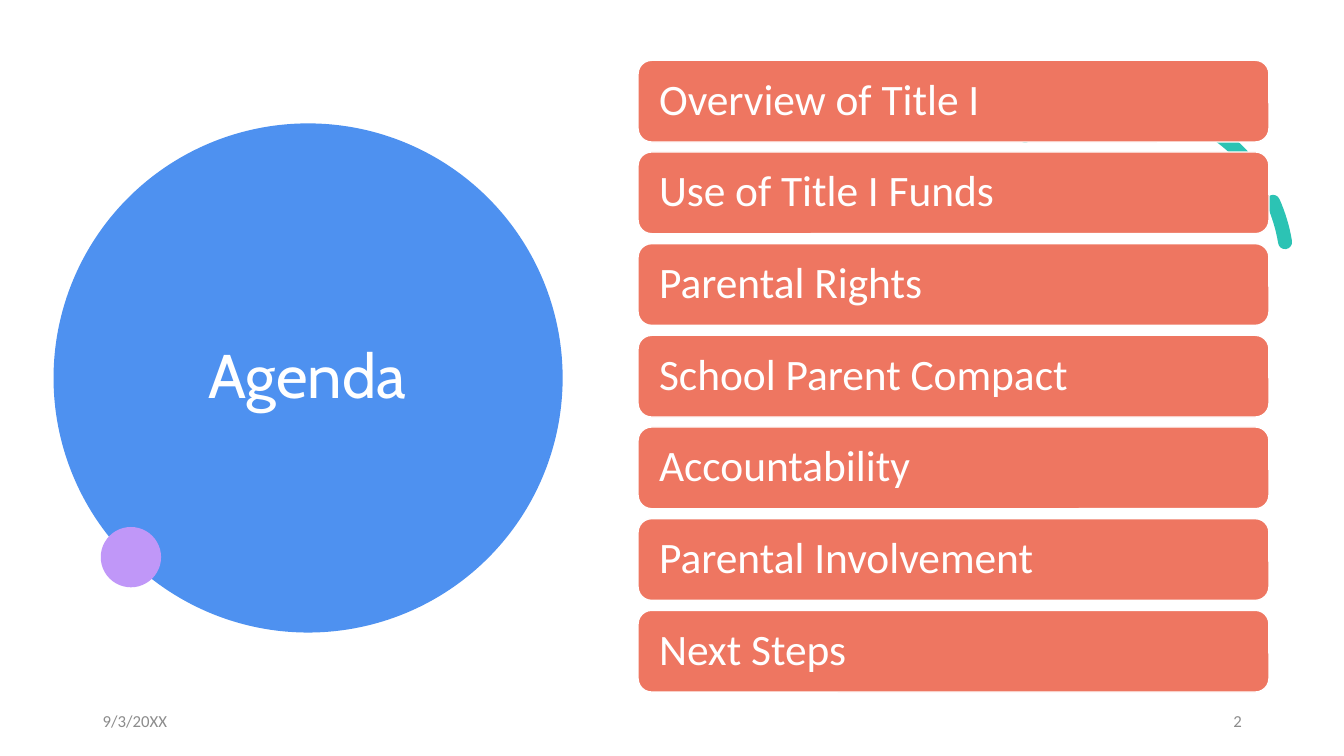
from pptx import Presentation
from pptx import util as u
from pptx.dml.color import RGBColor
from pptx.enum import dml, shapes, text

BLUE, TEAL, PURPLE, CORAL = "4E91F0", "2CC3B4", "C097F8", "EE7661"
WHITE, GREY = "FFFFFF", "8C8C8C"

TOPICS = [
    "Overview of Title I",
    "Use of Title I Funds",
    "Parental Rights",
    "School Parent Compact",
    "Accountability",
    "Parental Involvement",
    "Next Steps",
]
BAR_TOP, BAR_HEIGHT, BAR_PITCH = 1.52, 2.06, 2.31


def paint(color_format, hex_color):
    color_format.rgb = RGBColor.from_string(hex_color)


def box(left, top, width, height):
    return [u.Cm(value) for value in (left, top, width, height)]


def write(frame, words, size, color, font="Calibri",
          align=text.PP_ALIGN.LEFT, spacing=1.0):
    frame.word_wrap = True
    frame.vertical_anchor = text.MSO_ANCHOR.MIDDLE
    line = frame.paragraphs[0]
    line.text = words
    line.alignment = align
    line.line_spacing = spacing
    line.font.name = font
    line.font.size = u.Pt(size)
    paint(line.font.color, color)


def add_label(slide, place, words, size, color, **style):
    label = slide.shapes.add_textbox(*box(*place))
    write(label.text_frame, words, size, color, **style)


def add_filled(slide, kind, place, color):
    filled = slide.shapes.add_shape(kind, *box(*place))
    filled.shadow.inherit = False
    filled.fill.solid()
    paint(filled.fill.fore_color, color)
    filled.line.fill.background()
    return filled


def add_dashed_arc(slide, place, color):
    arc = slide.shapes.add_shape(shapes.MSO_SHAPE.ARC, *box(*place))
    arc.shadow.inherit = False
    arc.adjustments[0] = 158.17
    arc.adjustments[1] = 17.81
    arc.rotation = 330.2
    arc.fill.background()
    paint(arc.line.color, color)
    arc.line.width = u.Pt(10)
    arc.line.dash_style = dml.MSO_LINE.DASH
    arc.line._get_or_add_ln().set("cap", "rnd")


def add_topic(slide, top, words):
    bar = add_filled(slide, shapes.MSO_SHAPE.ROUNDED_RECTANGLE,
                     (16.08, top, 15.9, BAR_HEIGHT), CORAL)
    paint(bar.line.color, WHITE)
    bar.line.width = u.Pt(1)
    bar.text_frame.margin_left = bar.text_frame.margin_right = u.Cm(0.43)
    write(bar.text_frame, words, 31, WHITE, spacing=0.9)


def main():
    deck = Presentation()
    deck.slide_width, deck.slide_height = u.Cm(33.87), u.Cm(19.05)
    slide = deck.slides.add_slide(deck.slide_layouts[6])

    # Decoration behind the content
    oval = shapes.MSO_SHAPE.OVAL
    add_filled(slide, oval, (1.35, 3.11, 12.83, 12.83), BLUE)
    add_dashed_arc(slide, (24.13, 2.62, 8.31, 8.31), TEAL)
    add_filled(slide, oval, (2.54, 13.28, 1.52, 1.52), PURPLE)

    # Title
    add_label(slide, (3.25, 3.89, 8.99, 11.3), "Agenda", 44, WHITE,
              font="Cabin", align=text.PP_ALIGN.CENTER, spacing=0.9)

    # Agenda topics
    for row, topic in enumerate(TOPICS):
        add_topic(slide, BAR_TOP + row * BAR_PITCH, topic)

    # Date and page number
    add_label(slide, (2.34, 17.65, 7.62, 1.02), "9/3/20XX", 12, GREY)
    add_label(slide, (23.93, 17.65, 7.62, 1.02), "2", 12, GREY,
              align=text.PP_ALIGN.RIGHT)

    deck.save("out.pptx")


if __name__ == "__main__":
    main()
